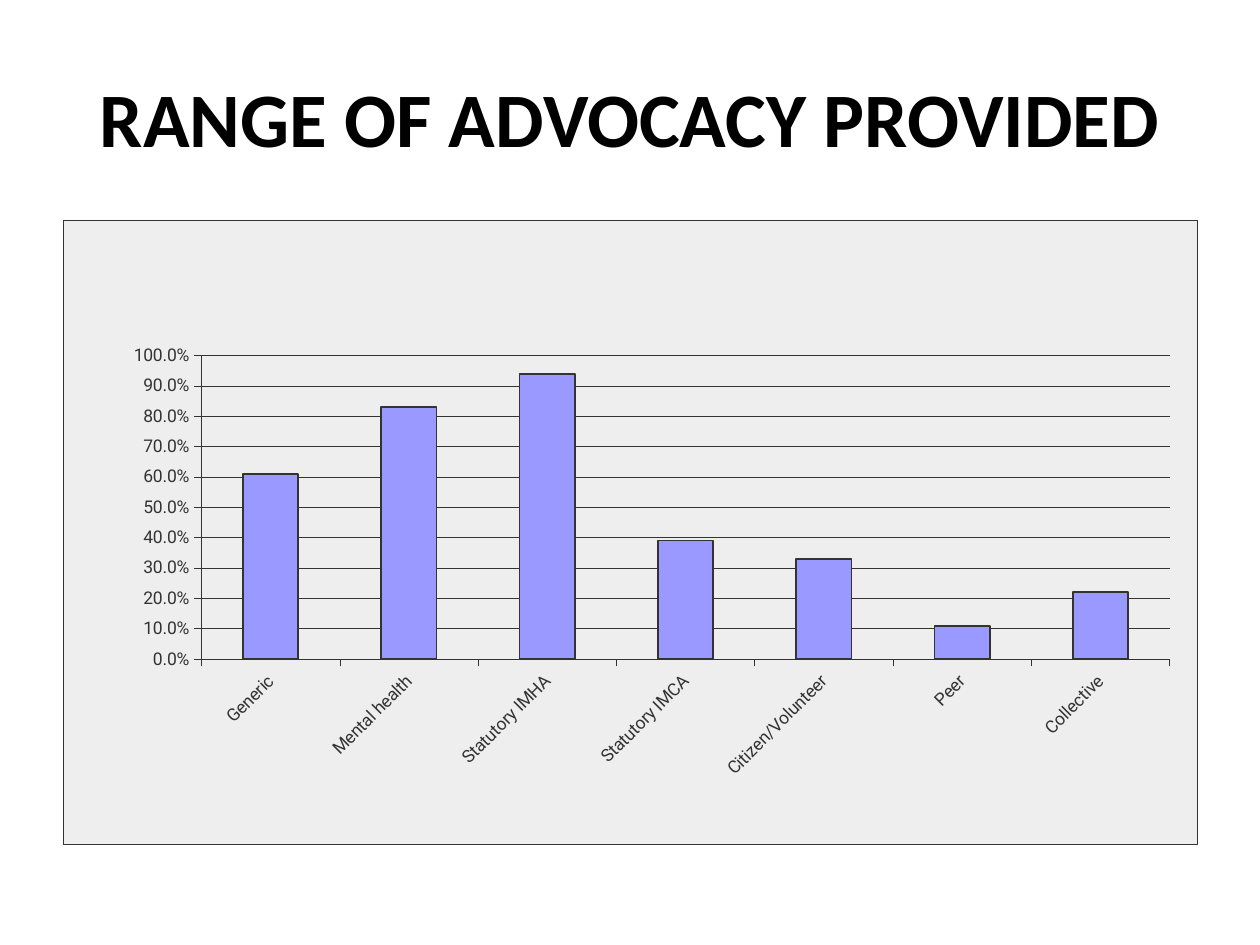
"""Build a slide with a column chart of the range of advocacy provided."""
from lxml import etree
from pptx import Presentation
from pptx.chart.data import CategoryChartData
from pptx.dml.color import RGBColor
from pptx.enum.chart import XL_CHART_TYPE, XL_TICK_MARK
from pptx.enum.text import MSO_ANCHOR, PP_ALIGN
from pptx.oxml import parse_xml
from pptx.util import Pt

COLUMNS = XL_CHART_TYPE.COLUMN_CLUSTERED
TICK_OUTSIDE, TICK_NONE = XL_TICK_MARK.OUTSIDE, XL_TICK_MARK.NONE
MIDDLE, CENTER = MSO_ANCHOR.MIDDLE, PP_ALIGN.CENTER

HEADING = "RANGE OF ADVOCACY PROVIDED"
SERIES_NAME = "Series 1"
ADVOCACY = [
    ("Generic", 0.61),
    ("Mental health", 0.83),
    ("Statutory IMHA", 0.94),
    ("Statutory IMCA", 0.39),
    ("Citizen/Volunteer", 0.33),
    ("Peer", 0.11),
    ("Collective", 0.22),
]

PX = 914400 / 126
SLIDE_SIZE = (1260, 945)
HEADING_BOX = (63, 38, 1134, 158)
CHART_BOX = (63, 220, 1134, 624)
PLOT_LAYOUT = {"x": 0.122, "y": 0.217, "w": 0.854, "h": 0.487}
LABEL_ROTATION = -45 * 60000

BLACK = RGBColor(0x00, 0x00, 0x00)
INK = RGBColor(0x33, 0x33, 0x33)
PANEL = RGBColor(0xEE, 0xEE, 0xEE)
COLUMN = RGBColor(0x99, 0x99, 0xFF)
HAIRLINE = Pt(0.25)

C_NS = "http://schemas.openxmlformats.org/drawingml/2006/chart"
A_NS = "http://schemas.openxmlformats.org/drawingml/2006/main"


def emu(box):
    return [round(length * PX) for length in box]


def style_line(line, width):
    line.color.rgb = INK
    line.width = width


def style_font(font):
    font.name = "Roboto"
    font.size = Pt(10)
    font.color.rgb = INK


def panel_properties(outline):
    return parse_xml(
        f'<c:spPr xmlns:c="{C_NS}" xmlns:a="{A_NS}">'
        f'<a:solidFill><a:srgbClr val="{PANEL}"/></a:solidFill>{outline}</c:spPr>'
    )


def place_plot(plot_area):
    for layout in plot_area.findall(f"{{{C_NS}}}layout"):
        plot_area.remove(layout)
    layout = etree.Element(f"{{{C_NS}}}layout")
    manual = etree.SubElement(layout, f"{{{C_NS}}}manualLayout")
    settings = {"layoutTarget": "inner", "xMode": "edge", "yMode": "edge", **PLOT_LAYOUT}
    for tag, value in settings.items():
        etree.SubElement(manual, f"{{{C_NS}}}{tag}").set("val", str(value))
    plot_area.insert(0, layout)


def add_heading(slide):
    heading = slide.shapes.title
    heading.left, heading.top, heading.width, heading.height = emu(HEADING_BOX)
    frame = heading.text_frame
    frame.text = HEADING
    frame.vertical_anchor = MIDDLE
    frame.paragraphs[0].alignment = CENTER
    font = frame.paragraphs[0].runs[0].font
    font.name, font.size, font.bold = "Calibri", Pt(44), True
    font.color.rgb = BLACK


def add_advocacy_chart(slide):
    data = CategoryChartData(number_format="0.0%")
    data.categories = [kind for kind, _ in ADVOCACY]
    data.add_series(SERIES_NAME, [share for _, share in ADVOCACY])
    chart = slide.shapes.add_chart(COLUMNS, *emu(CHART_BOX), data).chart
    chart.has_legend = False
    chart.has_title = False
    style_font(chart.font)

    for axis in (chart.category_axis, chart.value_axis):
        axis.major_tick_mark = TICK_OUTSIDE
        axis.minor_tick_mark = TICK_NONE
        style_line(axis.format.line, HAIRLINE)
        style_font(axis.tick_labels.font)

    shares = chart.value_axis
    shares.minimum_scale, shares.maximum_scale, shares.major_unit = 0, 1, 0.1
    shares.tick_labels.number_format = "0.0%"
    shares.tick_labels.number_format_is_linked = False
    shares.has_major_gridlines = True
    style_line(shares.major_gridlines.format.line, HAIRLINE)

    plot = chart.plots[0]
    plot.gap_width = 150
    plot.vary_by_categories = False
    columns = plot.series[0]
    columns.format.fill.solid()
    columns.format.fill.fore_color.rgb = COLUMN
    style_line(columns.format.line, Pt(1))

    root = chart.element
    root.xpath(".//c:catAx/c:txPr/a:bodyPr")[0].set("rot", str(LABEL_ROTATION))
    plot_area = root.xpath("c:chart/c:plotArea")[0]
    place_plot(plot_area)
    plot_area.append(panel_properties("<a:ln><a:noFill/></a:ln>"))
    border = (
        f'<a:ln w="{HAIRLINE}"><a:solidFill><a:srgbClr val="{INK}"/>'
        "</a:solidFill></a:ln>"
    )
    root.xpath("c:chart")[0].addnext(panel_properties(border))


def main():
    deck = Presentation()
    deck.slide_width, deck.slide_height = emu(SLIDE_SIZE)
    slide = deck.slides.add_slide(deck.slide_layouts[5])
    add_heading(slide)
    add_advocacy_chart(slide)
    deck.save("out.pptx")


if __name__ == "__main__":
    main()
